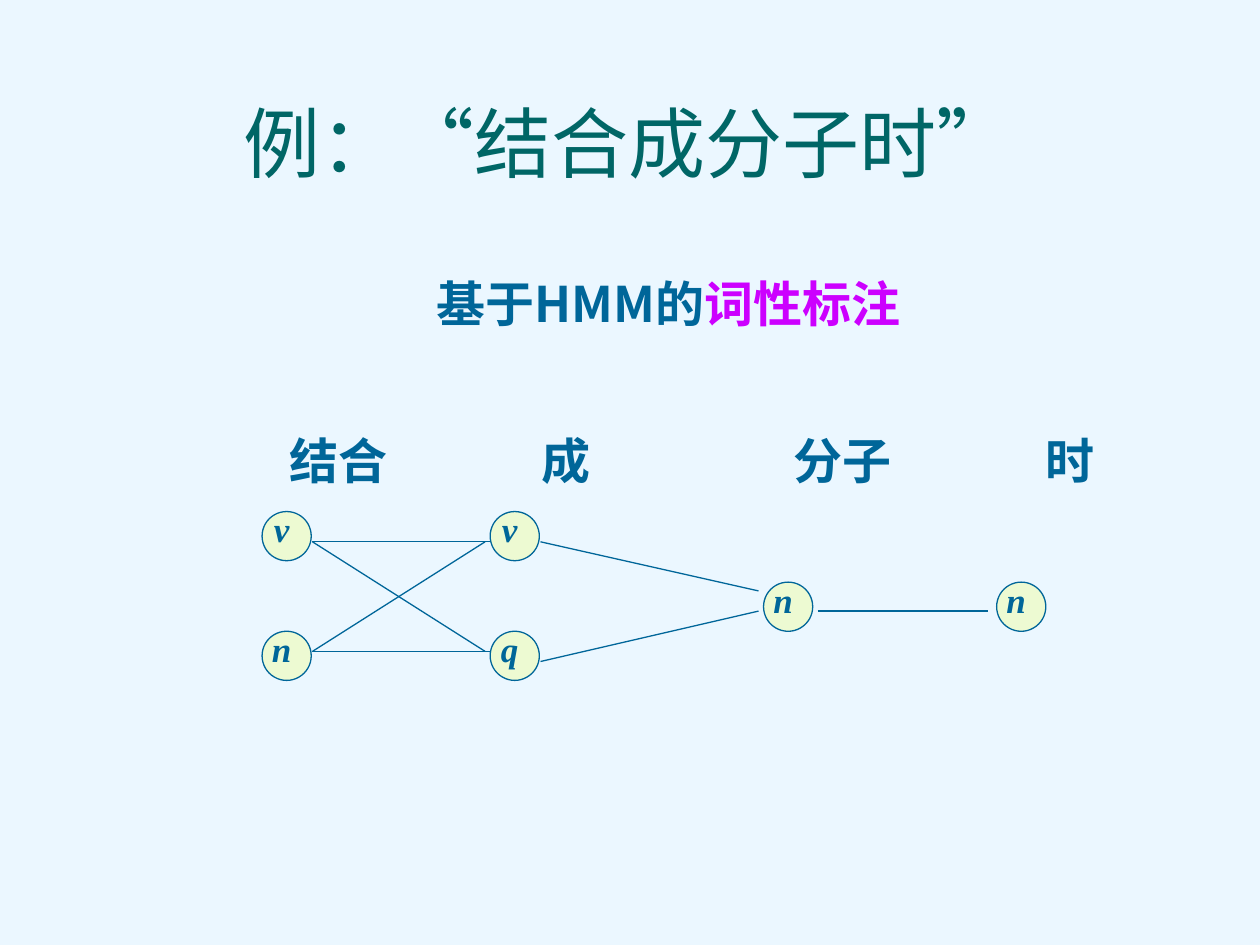
from dataclasses import dataclass
from itertools import product

from pptx import Presentation
from pptx.dml.color import RGBColor
from pptx.enum.shapes import MSO_CONNECTOR as CONN, MSO_SHAPE as SHAPE
from pptx.enum.text import MSO_ANCHOR as ANCHOR, PP_ALIGN as ALIGN
from pptx.oxml.ns import qn
from pptx.util import Inches, Pt


@dataclass(frozen=True)
class Theme:
    bg: str = "EBF7FF"
    title: str = "006666"
    ink: str = "006699"
    accent: str = "CC00FF"
    node: str = "EDFAD2"
    latin: str = "Times New Roman"
    cjk: str = "Noto Sans CJK SC"
    title_size: int = 44
    text_size: int = 28
    node_size: int = 20
    line: float = 0.75


T = Theme()


def cells(n):
    """Length of n cells on a grid with 10 cells to the inch."""
    return Inches(n / 10)


def rgb(value):
    return RGBColor.from_string(value)


def write(sp, *parts, size, font=T.latin, bold=False, italic=False,
          align=ALIGN.LEFT, anchor=ANCHOR.TOP, spacing=None):
    """Fill a shape with one paragraph of (text, colour) parts."""
    tf = sp.text_frame
    tf.word_wrap = True
    tf.vertical_anchor = anchor
    p = tf.paragraphs[0]
    p.alignment = align
    p.line_spacing = spacing
    for text, color in parts:
        r = p.add_run()
        r.text = text
        f = r.font
        f.name, f.size, f.bold, f.italic = font, Pt(size), bold, italic
        f.color.rgb = rgb(color)
        rPr = r._r.get_or_add_rPr()
        rPr.set("lang", "zh-CN")
        ea = rPr.makeelement(qn("a:ea"), {"typeface": T.cjk})
        rPr.find(qn("a:latin")).addnext(ea)
    return p


def add_text(slide, box, *parts, **fmt):
    sp = slide.shapes.add_textbox(*map(cells, box))
    return write(sp, *parts, **fmt)


def add_title(slide, box):
    sp = slide.shapes.title
    sp.left, sp.top, sp.width, sp.height = map(cells, box)
    write(sp, ("例：“结合成分子时”", T.title), size=T.title_size,
          align=ALIGN.CENTER, anchor=ANCHOR.BOTTOM, spacing=0.9)


def add_subtitle(slide, box):
    add_text(slide, box, ("基于HMM的", T.ink), ("词性标注", T.accent),
             size=T.text_size, font=T.cjk, bold=True)


def add_words(slide, box, first=13.7, pitch=20):
    """One line of words, each set at its own tab stop."""
    words = ["结合", "成", "分子", "时"]
    p = add_text(slide, box, ("".join("\t" + w for w in words), T.ink),
                 size=T.text_size, bold=True)
    pPr = p._p.get_or_add_pPr()
    tabs = pPr.makeelement(qn("a:tabLst"), {})
    pPr.append(tabs)
    for i in range(len(words)):
        stop = {"pos": str(int(cells(first + i * pitch))), "algn": "l"}
        tabs.append(tabs.makeelement(qn("a:tab"), stop))


def add_node(slide, x, y, tag, size=3.9, label=4.7, shift=0.8):
    sp = slide.shapes.add_shape(SHAPE.OVAL, *map(cells, (x, y, size, size)))
    sp.shadow.inherit = False
    sp.fill.solid()
    sp.fill.fore_color.rgb = rgb(T.node)
    sp.line.color.rgb = rgb(T.ink)
    sp.line.width = Pt(T.line)
    # The tag sits slightly up and left of the circle's middle
    add_text(slide, (x - shift, y - shift, label, label), (tag, T.ink),
             size=T.node_size, bold=True, italic=True, align=ALIGN.CENTER)


def add_line(slide, x1, y1, x2, y2):
    ln = slide.shapes.add_connector(CONN.STRAIGHT, *map(cells, (x1, y1, x2, y2)))
    ln.line.color.rgb = rgb(T.ink)
    ln.line.width = Pt(T.line)
    spPr = ln._element.spPr
    spPr.append(spPr.makeelement(qn("a:effectLst"), {}))


def add_lattice(slide, left, top):
    """Tag candidates for each word, joined by their transitions."""
    cols = [0, 18.1, 39.8, 58.3]
    upper, middle, lower = 0, 5.6, 9.5
    nodes = [(cols[0], upper, "v"), (cols[0], lower, "n"),
             (cols[1], upper, "v"), (cols[1], lower, "q"),
             (cols[2], middle, "n"), (cols[3], middle, "n")]
    for x, y, tag in nodes:
        add_node(slide, left + x, top + y, tag)

    # Every pair between the first two columns, then the single paths
    ports = [2.4, 11.1]
    edges = [(4, a, cols[1] if a == b else 17.7, b)
             for a, b in product(ports, ports)]
    edges += [(22.1, 2.4, 39.4, 6.3), (22.1, 11.9, 39.4, 7.9),
              (44.1, 7.9, 57.6, 7.9)]
    for x1, y1, x2, y2 in edges:
        add_line(slide, left + x1, top + y1, left + x2, top + y2)


def main():
    prs = Presentation()
    prs.slide_width, prs.slide_height = cells(100), cells(75)
    slide = prs.slides.add_slide(prs.slide_layouts[5])
    slide.background.fill.solid()
    slide.background.fill.fore_color.rgb = rgb(T.bg)

    add_title(slide, (4.8, 1.1, 90.2, 14.4))
    add_words(slide, (8.3, 33.7, 89.9, 25.9))
    add_lattice(slide, 20.8, 40.6)
    add_subtitle(slide, (33.7, 21.2, 39, 5.7))
    prs.save("out.pptx")


if __name__ == "__main__":
    main()
